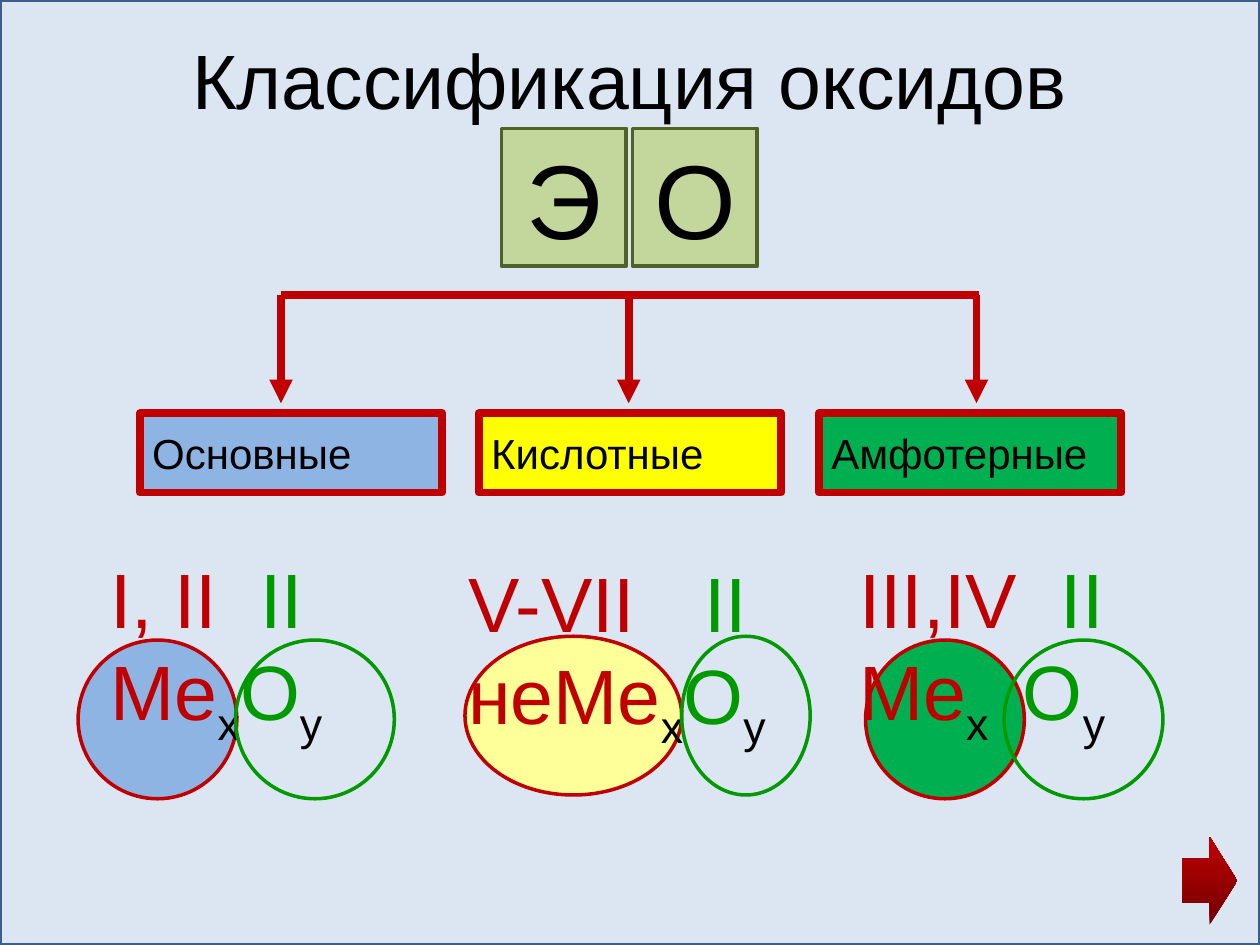
"""Build a slide that sorts oxides into three classes."""
from dataclasses import dataclass

from lxml import etree
from pptx import Presentation
from pptx.dml.color import RGBColor
from pptx.enum.shapes import MSO_CONNECTOR as Conn, MSO_SHAPE as Kind
from pptx.enum.text import MSO_ANCHOR as Anchor, PP_ALIGN as Align
from pptx.oxml.ns import qn
from pptx.util import Inches, Pt

RED, GREEN, BLACK = "C00000", "009900", "000000"
BLUE, LEAF = "8EB4E3", "00B050"


@dataclass
class Group:
    """Hold one oxide class: its name box and its formula."""
    name: str
    fill: str
    left: float
    text: tuple[float, float, float]
    metal: tuple[float, float]
    oxide: tuple[float, float]
    top: float
    tint: str
    valence: str
    symbol: str
    stop: float
    gap: float = 0


GROUPS = [
    Group("Основные", BLUE, 1.11, (0.78, 4.34, 2.4), (0.62, 1.26),
          (1.87, 1.26), 5.08, BLUE, "I, II", "Me", 1.19),
    Group("Кислотные", "FFFF00", 3.8, (3.62, 4.37, 2.64), (3.69, 1.72),
          (5.41, 1.02), 5.05, "FFFF99", "V-VII", "неMe", 1.87),
    Group("Амфотерные", LEAF, 6.5, (6.72, 4.34, 2.63), (6.87, 1.26),
          (7.97, 1.26), 5.08, LEAF, "III,IV", "Me", 1.6, 1.3),
]


def color(code: str) -> RGBColor:
    """Turn a hex string into a colour."""
    return RGBColor.from_string(code)


def style(font, size: float, code: str) -> None:
    """Set face, size and colour of a font."""
    font.name = "Arial"
    font.size = Pt(size)
    font.color.rgb = color(code)


def place(item, left: float, top: float, width: float, height: float) -> None:
    """Put a shape at a spot in inches."""
    item.left, item.top = Inches(left), Inches(top)
    item.width, item.height = Inches(width), Inches(height)


def draw(slide, kind, box: tuple, fill: str | None, line: str, weight: float):
    """Add a preset shape with a fill and an outline."""
    shape = slide.shapes.add_shape(kind, *map(Inches, box))
    shape.shadow.inherit = False
    if fill:
        shape.fill.solid()
        shape.fill.fore_color.rgb = color(fill)
    else:
        shape.fill.background()
    shape.line.color.rgb = color(line)
    shape.line.width = Pt(weight)
    return shape


def label(shape, text: str, size: float, align) -> None:
    """Write one black line in a shape."""
    frame = shape.text_frame
    frame.text = text
    frame.vertical_anchor = Anchor.MIDDLE
    para = frame.paragraphs[0]
    para.alignment = align
    style(para.runs[0].font, size, BLACK)


def link(slide, start: tuple, end: tuple, arrow: bool = False) -> None:
    """Add a straight red line, with an arrowhead if asked."""
    line = slide.shapes.add_connector(Conn.STRAIGHT, *map(Inches, start + end))
    line.line.color.rgb = color(RED)
    line.line.width = Pt(4.5)
    if arrow:
        etree.SubElement(line.line._get_or_add_ln(), qn("a:tailEnd"),
                         type="triangle")
    etree.SubElement(line._element.spPr, qn("a:effectLst"))


def set_tab(para, pos: float) -> None:
    """Give a paragraph one left tab stop."""
    tabs = etree.SubElement(para._p.get_or_add_pPr(), qn("a:tabLst"))
    etree.SubElement(tabs, qn("a:tab"), pos=str(Inches(pos)), algn="l")


def write(para, parts: list[tuple[str, str, bool]]) -> None:
    """Fill a paragraph with coloured runs, some of them subscript."""
    for text, code, low in parts:
        run = para.add_run()
        run.text = text
        style(run.font, 44, code)
        if low:
            run._r.get_or_add_rPr().set("baseline", "-25000")


def formula(slide, group: Group) -> None:
    """Draw the general formula of a class with its two ovals."""
    oval = Kind.FLOWCHART_CONNECTOR
    left, width = group.metal
    draw(slide, oval, (left, group.top, width, 1.26), group.tint, RED, 2)

    box = slide.shapes.add_textbox(*map(Inches, (*group.text, 1.64)))
    frame = box.text_frame
    frame.word_wrap = True
    frame.vertical_anchor = Anchor.MIDDLE
    first = frame.paragraphs[0]
    set_tab(first, group.stop)
    write(first, [(group.valence + "\t", RED, False), ("II", GREEN, False)])
    second = frame.add_paragraph()
    tail = ""
    if group.gap:
        set_tab(second, group.gap)
        tail = "\t"
    write(second, [(group.symbol, RED, False), ("x" + tail, BLACK, True),
                   ("O", GREEN, False), ("y", BLACK, True)])

    left, width = group.oxide
    draw(slide, oval, (left, group.top, width, 1.26), None, GREEN, 2)


def main() -> None:
    """Build and save the slide."""
    deck = Presentation()
    deck.slide_width, deck.slide_height = Inches(10), Inches(7.5)
    slide = deck.slides.add_slide(deck.slide_layouts[5])

    back = draw(slide, Kind.RECTANGLE, (0, 0, 10, 7.5), "DCE6F2", "3A5F8C", 2)
    slide.shapes._spTree.insert(2, back._element)
    title = slide.shapes.title
    place(title, 0.5, 0, 9, 1.25)
    label(title, "Классификация оксидов", 44, Align.CENTER)

    for group in GROUPS:
        box = draw(slide, Kind.RECTANGLE, (group.left, 3.28, 2.4, 0.63),
                   group.fill, RED, 4.5)
        label(box, group.name, 24, Align.LEFT)

    link(slide, (7.77, 2.34), (2.23, 2.34))
    for col in range(3):
        mid = 2.23 + 2.76 * col
        link(slide, (mid, 2.34), (mid, 3.2), True)

    for col, text in enumerate("ЭО"):
        tile = draw(slide, Kind.RECTANGLE, (3.98 + 1.04 * col, 1.02, 0.99, 1.09),
                    "C3D69B", "4F6228", 2.25)
        label(tile, text, 60, Align.CENTER)

    for group in GROUPS:
        formula(slide, group)

    arrow = draw(slide, Kind.RIGHT_ARROW, (9.38, 6.64, 0.44, 0.7), None, RED, 1)
    arrow.line.fill.background()
    arrow.fill.gradient()
    arrow.fill.gradient_angle = 90
    for stop, code in zip(arrow.fill.gradient_stops, ("720000", RED)):
        stop.color.rgb = color(code)

    deck.save("out.pptx")


if __name__ == "__main__":
    main()
